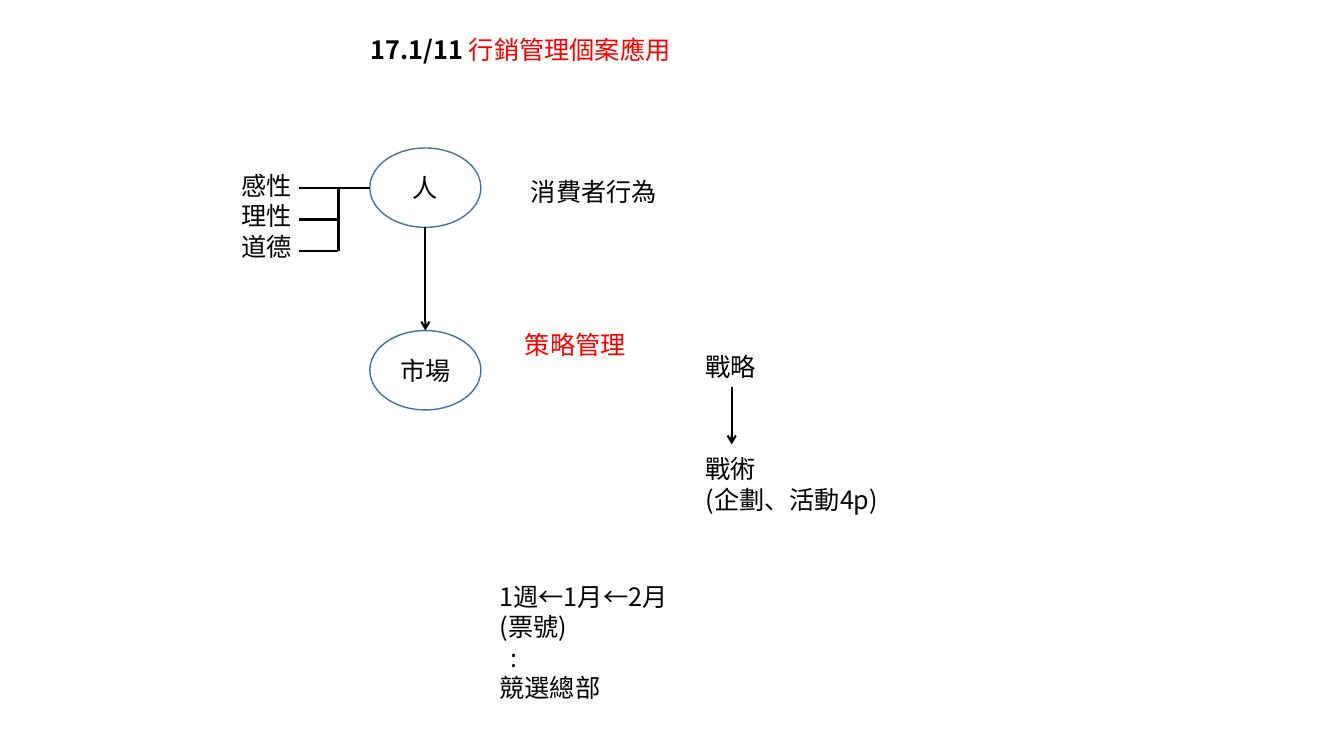
from lxml.etree import SubElement
from pptx import Presentation
from pptx.dml.color import RGBColor
from pptx.enum.shapes import MSO_CONNECTOR as Connector, MSO_SHAPE as Shape
from pptx.enum.text import MSO_ANCHOR as Anchor, MSO_AUTO_SIZE as AutoSize, PP_ALIGN as Align
from pptx.oxml.ns import qn
from pptx.util import Cm, Pt

FONT = "Noto Sans CJK SC"
BLACK, RED, WHITE, BLUE = "000000", "FF0000", "FFFFFF", "43739E"


def color(value):
    return RGBColor.from_string(value)


def add_run(paragraph, text, fill=BLACK, bold=False, font=FONT):
    run = paragraph.add_run()
    run.text = text
    run.font.name = font
    run.font.size = Pt(18)
    run.font.bold = bold
    run.font.color.rgb = color(fill)
    # East Asian glyphs take their own font setting
    SubElement(run.font._element, qn("a:ea"), typeface=FONT)


def add_text(slide, left, top, width, height, lines, fill=BLACK):
    box = slide.shapes.add_textbox(Cm(left), Cm(top), Cm(width), Cm(height))
    frame = box.text_frame
    frame.word_wrap = True
    frame.auto_size = AutoSize.SHAPE_TO_FIT_TEXT
    for index, line in enumerate(lines):
        paragraph = frame.add_paragraph() if index else frame.paragraphs[0]
        add_run(paragraph, line, fill)
    return frame


def add_line(slide, x1, y1, x2, y2, arrow=False):
    line = slide.shapes.add_connector(Connector.STRAIGHT, Cm(x1), Cm(y1), Cm(x2), Cm(y2))
    line.line.color.rgb = color(BLACK)
    line.line.width = Pt(1.5)
    if arrow:
        SubElement(line.line._get_or_add_ln(), qn("a:tailEnd"), type="arrow")
    SubElement(line._element.spPr, qn("a:effectLst"))


def add_title(slide, left, top, width, height):
    box = slide.shapes.add_textbox(Cm(left), Cm(top), Cm(width), Cm(height))
    box.text_frame.word_wrap = False
    box.text_frame.auto_size = AutoSize.SHAPE_TO_FIT_TEXT
    paragraph = box.text_frame.paragraphs[0]
    paragraph.alignment = Align.CENTER
    add_run(paragraph, "17.1/11 ", bold=True)
    add_run(paragraph, "行銷管理", RED, font="Calibri")
    add_run(paragraph, "個案應用", RED)


def add_people_to_market(slide, left, top, width, height):
    oval_height = 2
    market_top = top + height - oval_height
    for label, oval_top in (("人", top), ("市場", market_top)):
        oval = slide.shapes.add_shape(Shape.OVAL, Cm(left), Cm(oval_top), Cm(width), Cm(oval_height))
        oval.shadow.inherit = False
        oval.fill.solid()
        oval.fill.fore_color.rgb = color(WHITE)
        oval.line.color.rgb = color(BLUE)
        oval.line.width = Pt(1)
        oval.text_frame.vertical_anchor = Anchor.MIDDLE
        paragraph = oval.text_frame.paragraphs[0]
        paragraph.alignment = Align.CENTER
        add_run(paragraph, label)
    middle = left + width / 2
    add_line(slide, middle, top + oval_height, middle, market_top, arrow=True)
    # Fields of study beside the ovals
    add_text(slide, left + 3.81, top + 0.59, 5.41, 1.02, ["消費者行為"])
    add_text(slide, left + 3.66, top + 4.45, 5.41, 1.02, ["策略管理"], RED)


def add_motives(slide, left, top, width, height):
    """Three motives, bracketed and joined to the oval at the right edge."""
    add_text(slide, left, top, 2.31, height, ["感性", "理性", "道德"])
    right, stem, tip = left + width, left + 2.69, left + 1.7
    first, step = top + 0.56, 0.8
    for index in range(3):
        y = first + index * step
        add_line(slide, stem if index else right, y, tip, y)
    add_line(slide, stem, first, stem, first + 2 * step)


def add_strategy_to_tactics(slide, left, top, width, height):
    add_text(slide, left, top, 1.8, 1.02, ["戰略"])
    add_line(slide, left + 0.91, top + 1.02, left + 0.91, top + 2.46, arrow=True)
    add_text(slide, left, top + height - 1.8, width, 1.8, ["戰術", "(企劃、活動4p)"])


def add_campaign(slide, left, top, width, height):
    lines = ["1週←1月←2月", "(票號)", ":", "競選總部"]
    frame = add_text(slide, left, top, width, height, lines)
    # Indent the colon
    frame.paragraphs[2]._p.get_or_add_pPr().set("marL", str(Cm(0.28)))


def main():
    presentation = Presentation()
    presentation.slide_width, presentation.slide_height = Cm(33.87), Cm(19.05)
    slide = presentation.slides.add_slide(presentation.slide_layouts[6])
    add_people_to_market(slide, 9.32, 3.73, 2.8, 6.6)
    add_motives(slide, 5.84, 4.17, 3.48, 2.57)
    add_strategy_to_tactics(slide, 17.53, 8.74, 6, 4.37)
    add_campaign(slide, 12.34, 14.53, 6.81, 3.33)
    add_title(slide, 8.86, 0.74, 8.53, 1.02)
    presentation.save("out.pptx")


if __name__ == "__main__":
    main()
